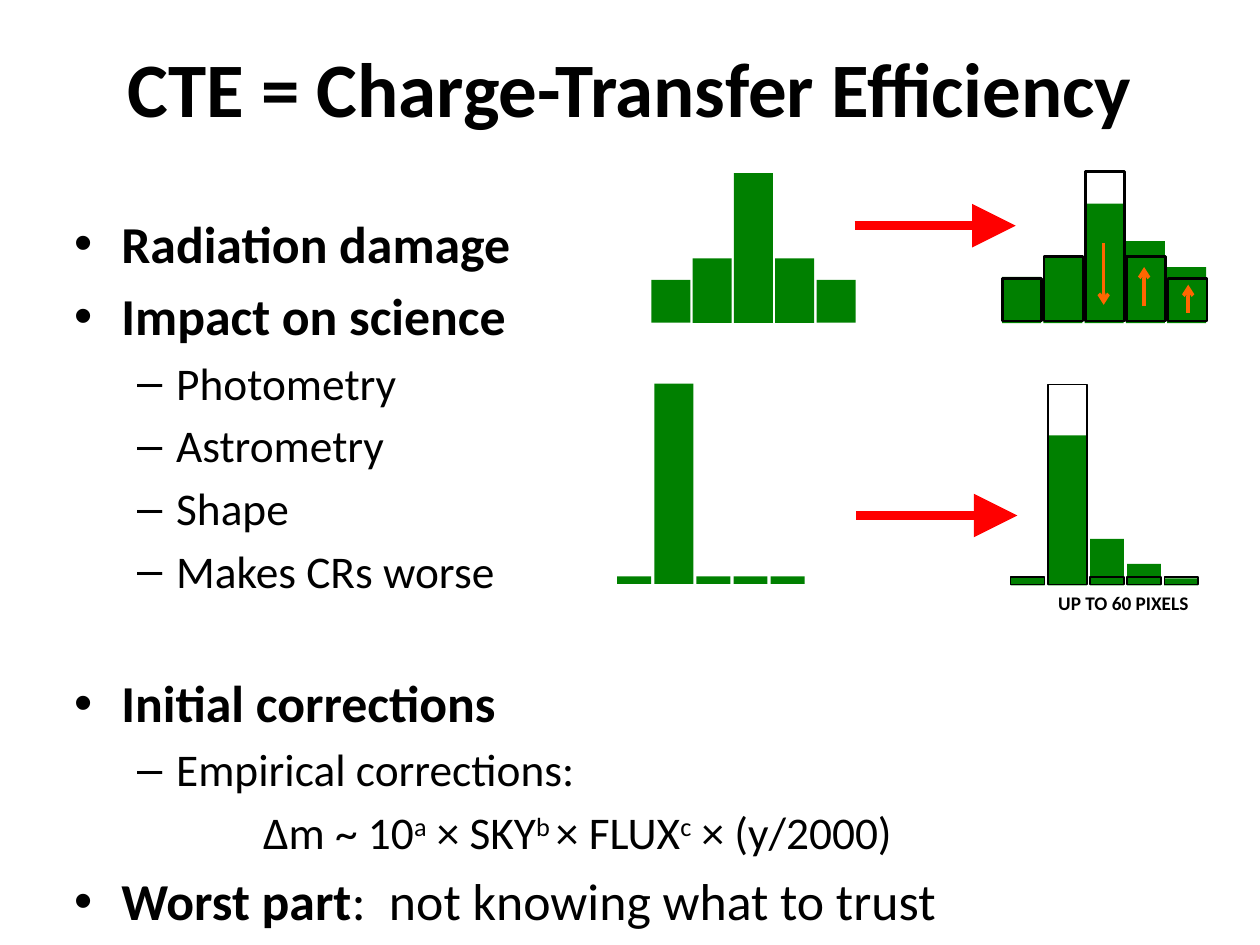
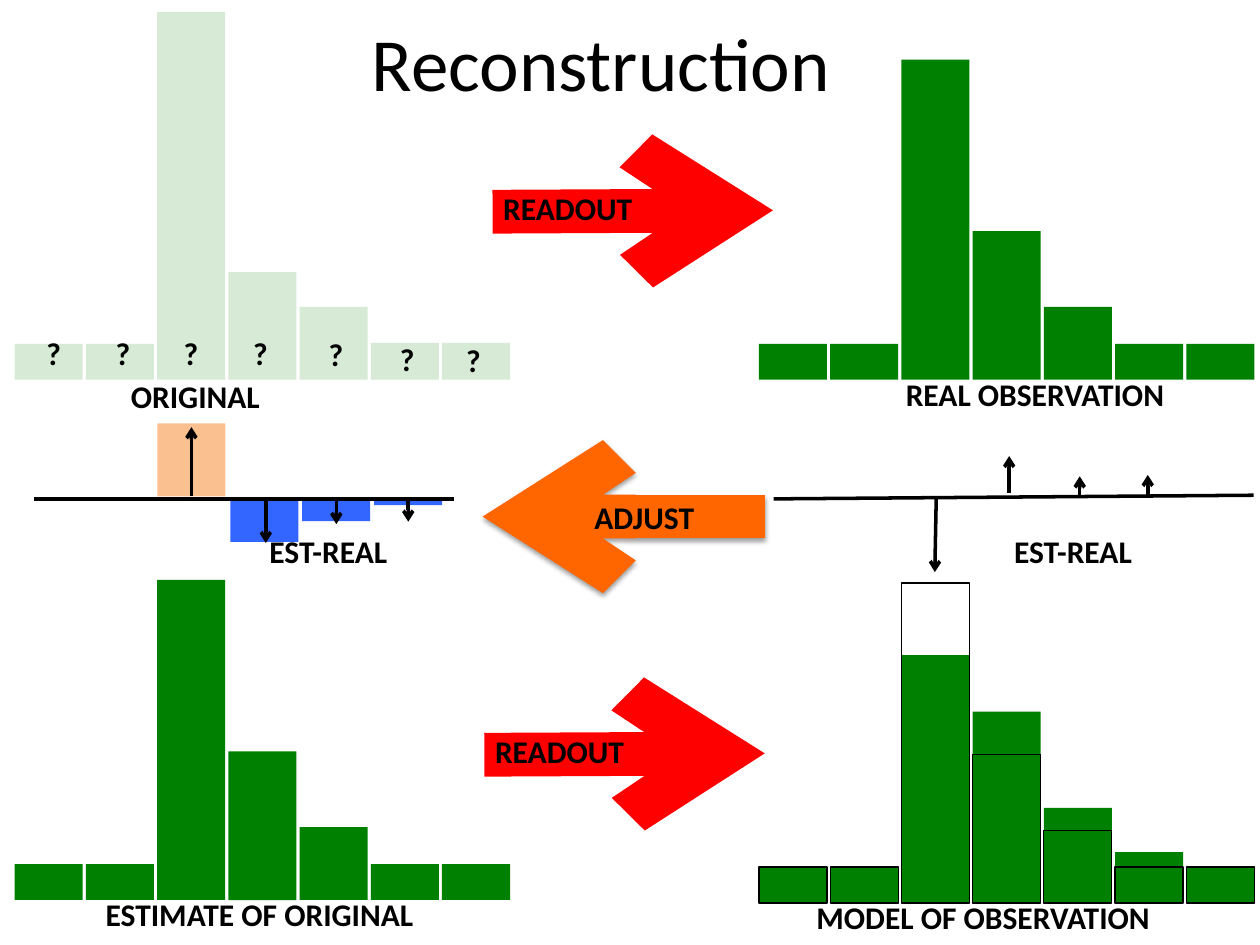
import lxml.etree
import pptx
import pptx.dml.color
import pptx.enum.shapes
import pptx.enum.text
import pptx.oxml.ns
import pptx.util

Pt = pptx.util.Pt
RGB = pptx.dml.color.RGBColor
BLACK = RGB(0, 0, 0)
GREEN = RGB(0, 128, 0)
RED = RGB(255, 0, 0)
ORANGE = RGB(255, 102, 0)
PEACH = RGB(250, 192, 144)
BLUE = RGB(51, 102, 255)


def sub(parent, tag, **attrs):
    return lxml.etree.SubElement(parent, pptx.oxml.ns.qn(tag), attrs)


class Deck:
    face = "Calibri"

    def __init__(self):
        self.file = pptx.Presentation()
        self.file.slide_width = Pt(720)
        self.file.slide_height = Pt(540)
        self.slide = None

    def page(self):
        self.slide = self.file.slides.add_slide(self.file.slide_layouts[6])

    def style(self, para, size, bold):
        font = para.font
        font.name = self.face
        font.size = Pt(size)
        font.bold = bold
        font.color.rgb = BLACK

    def frame(self, left, top, width, height, wrap=True):
        box = self.slide.shapes.add_textbox(Pt(left), Pt(top), Pt(width), Pt(height))
        box.text_frame.word_wrap = wrap
        return box.text_frame

    def title(self, text, left, top, width, height, size, bold=False):
        frame = self.frame(left, top, width, height)
        frame.vertical_anchor = pptx.enum.text.MSO_ANCHOR.MIDDLE
        para = frame.paragraphs[0]
        para.text = text
        para.alignment = pptx.enum.text.PP_ALIGN.CENTER
        self.style(para, size, bold)

    def label(self, text, left, top, width, size=18, height=29):
        para = self.frame(left, top, width, height, False).paragraphs[0]
        para.text = text
        self.style(para, size, True)

    def item(self, para, runs, size, bold, before, left, hang=0, mark=None):
        para.space_before = Pt(before)
        props = para._p.get_or_add_pPr()
        props.set("marL", str(Pt(left)))
        props.set("indent", str(Pt(-hang)))
        if mark:
            sub(props, "a:buFont", typeface="Arial")
            sub(props, "a:buChar", char=mark)
        else:
            sub(props, "a:buNone")
        self.style(para, size, bold)
        for text, kind in runs:
            run = para.add_run()
            run.text = text
            if kind == "super":
                run.font._element.set("baseline", "30000")
            elif kind == "bold":
                run.font.bold = True

    def bar(self, left, base, width, rise, fill=None, edge=None, alpha=None):
        kind = pptx.enum.shapes.MSO_SHAPE.RECTANGLE
        top = min(base, base - rise)
        shape = self.slide.shapes.add_shape(kind, Pt(left), Pt(top), Pt(width), Pt(abs(rise)))
        shape.shadow.inherit = False
        if fill is None:
            shape.fill.background()
        else:
            shape.fill.solid()
            shape.fill.fore_color.rgb = fill
        if alpha:
            color = shape._element.spPr.find(".//" + pptx.oxml.ns.qn("a:srgbClr"))
            sub(color, "a:alpha", val=str(alpha * 1000))
        if edge:
            shape.line.color.rgb = BLACK
            shape.line.width = Pt(edge)
        else:
            shape.line.fill.background()

    def row(self, left, base, widths, gap, rises, **look):
        for width, rise in zip(widths, rises):
            self.bar(left, base, width, rise, **look)
            left += width + gap

    def line(self, ends, color=BLACK, width=2, head="arrow", size="med", shade=False):
        kind = pptx.enum.shapes.MSO_CONNECTOR.STRAIGHT
        link = self.slide.shapes.add_connector(kind, *(Pt(end) for end in ends))
        link.line.color.rgb = color
        link.line.width = Pt(width)
        props = link._element.spPr
        if head:
            sub(link.line._get_or_add_ln(), "a:tailEnd", type=head, w=size, len=size)
        effect = sub(props, "a:effectLst")
        if shade:
            cast = sub(effect, "a:outerShdw", blurRad=str(Pt(3.1)), dist=str(Pt(1.6)),
                       dir="5400000", rotWithShape="0")
            sub(sub(cast, "a:srgbClr", val=str(BLACK)), "a:alpha", val="38000")


def charge(deck):
    deck.page()
    deck.title("CTE = Charge-Transfer Efficiency", 36, 18, 648, 63, 44, True)
    head = dict(size=29.6, bold=True, before=5.9, left=27, hang=27, mark="•")
    point = dict(size=25.9, bold=False, before=4.8, left=58.3, hang=22.3, mark="–")
    math = dict(point, left=108, hang=0, mark=None)
    items = [
        ("Radiation damage", head),
        ("Impact on science", head),
        ("Photometry", point),
        ("Astrometry", point),
        ("Shape", point),
        ("Makes CRs worse", point),
        ("Initial corrections", dict(head, before=42)),
        ("Empirical corrections:", point),
        ([("Δm ~ 10", ""), ("a", "super"), (" × SKY", ""), ("b ", "super"),
          ("× FLUX", ""), ("c", "super"), (" × (y/2000)", "")], math),
        ([("Worst part", "bold"), (":  not knowing what to trust", "")],
         dict(head, bold=False)),
    ]
    frame = deck.frame(35.3, 117.4, 648, 381)
    for num, (runs, look) in enumerate(items):
        para = frame.add_paragraph() if num else frame.paragraphs[0]
        deck.item(para, [(runs, "")] if isinstance(runs, str) else runs, **look)

    even = [22.3] * 5
    peak = [24.5, 36.9, 85.6, 36.9, 24.5]
    deck.row(372.2, 184.5, even, 1.3, peak, fill=GREEN)
    deck.row(572.6, 184.7, even, 1.3, [26.5, 37.4, 68.3, 46.9, 32], fill=GREEN)
    mixed = [19.4, 22.3, 19.4, 19.4, 19.4]
    spike = [4.3, 114.5, 4.3, 4.3, 4.3]
    deck.row(352.7, 333.7, mixed, 1.8, spike, fill=GREEN)
    deck.row(577.6, 334.5, mixed, 1.8, [4.3, 85.7, 26.6, 12.2, 4], fill=GREEN)
    for left, top in ((488.4, 129), (489.4, 294.6)):
        deck.line((left, top, left + 92, top), RED, 5, "triangle", "lg")
    for left, start, end in ((630.7, 139, 174.2), (653.8, 175, 152.6), (679, 178.6, 162.7)):
        deck.line((left, start, left, end), ORANGE)
    deck.row(573, 183.5, even, 1.3, peak, edge=1.5)
    deck.row(577.6, 334.1, mixed, 1.8, spike, edge=0.75)
    deck.label("UP TO 60 PIXELS", 597.6, 334.1, 90, 11, 21)


def rebuild(deck):
    deck.page()
    wide = [38.9] * 7
    gap = 1.8
    west, east = 8.4, 433.7
    real = [20.5, 20.5, 182.9, 85, 41.6, 20.5, 20.5]
    first = [20.5, 20.5, 210.2, 61.4, 41.6, 21, 21]
    model = [20.5, 20.5, 141.6, 109.4, 54.3, 29, 20.5]
    deck.row(east, 217, wide, gap, real, fill=GREEN)
    deck.row(west, 217, wide, gap, first, fill=GREEN, alpha=16)
    deck.row(west, 514.3, wide, gap, real, fill=GREEN)
    deck.row(east, 516, wide, gap, model, fill=GREEN)
    deck.row(east, 516, wide, gap, real, edge=0.75)
    deck.bar(90, 283.7, 38.9, 41.8, PEACH)
    deck.row(131.6, 286.2, wide, 2.2, [-23.4, -11.6, -2.5], fill=BLUE)

    marks = [(19.4, 187.2), (59, 187.2), (97.9, 187.2), (137.5, 187.2),
             (180.7, 188), (221.4, 190.8), (259.2, 191.5)]
    for left, top in marks:
        deck.label("?", left, top, 23)

    for left, top in ((281.5, 120.6), (276.8, 430.9)):
        deck.line((left, top + 0.4, left + 160.2, top - 0.4), RED, 25)
        deck.label("READOUT", left - 1, top - 16.2, 89.3)
    deck.line((437, 295.2, 275.8, 295.2), ORANGE, 25, shade=True)
    deck.label("ADJUST", 332.6, 280.8, 72.7)

    arrows = [(535, 285.1, 534.2, 326.9), (576.7, 281.5, 576.7, 260.6),
              (617, 283.7, 617, 272.2), (655.9, 283, 655.9, 271.4),
              (109.4, 283.7, 109.4, 244.1), (151.9, 285.1, 151.9, 310.3),
              (192.2, 284.4, 192.2, 299.5), (233.3, 285.1, 233.3, 298.1)]
    for ends in arrows:
        deck.line(ends)
    deck.line((442.1, 285.1, 716.4, 283), head=None)
    deck.line((19.4, 285.1, 259.2, 285.1), head=None)

    labels = [("REAL OBSERVATION", 510.5, 211, 166.3),
              ("ORIGINAL", 67.7, 211.7, 89.3),
              ("MODEL OF OBSERVATION", 459.4, 509.8, 209.5),
              ("ESTIMATE OF ORIGINAL", 53.3, 507.6, 193.7),
              ("EST-REAL", 572.4, 300.2, 84.2),
              ("EST-REAL", 146.9, 300.2, 84.2)]
    for label in labels:
        deck.label(*label)
    deck.title("Reconstruction", 19.4, 7.2, 648, 56.2, 42.9)


def main():
    deck = Deck()
    charge(deck)
    rebuild(deck)
    deck.file.save("out.pptx")


if __name__ == "__main__":
    main()
